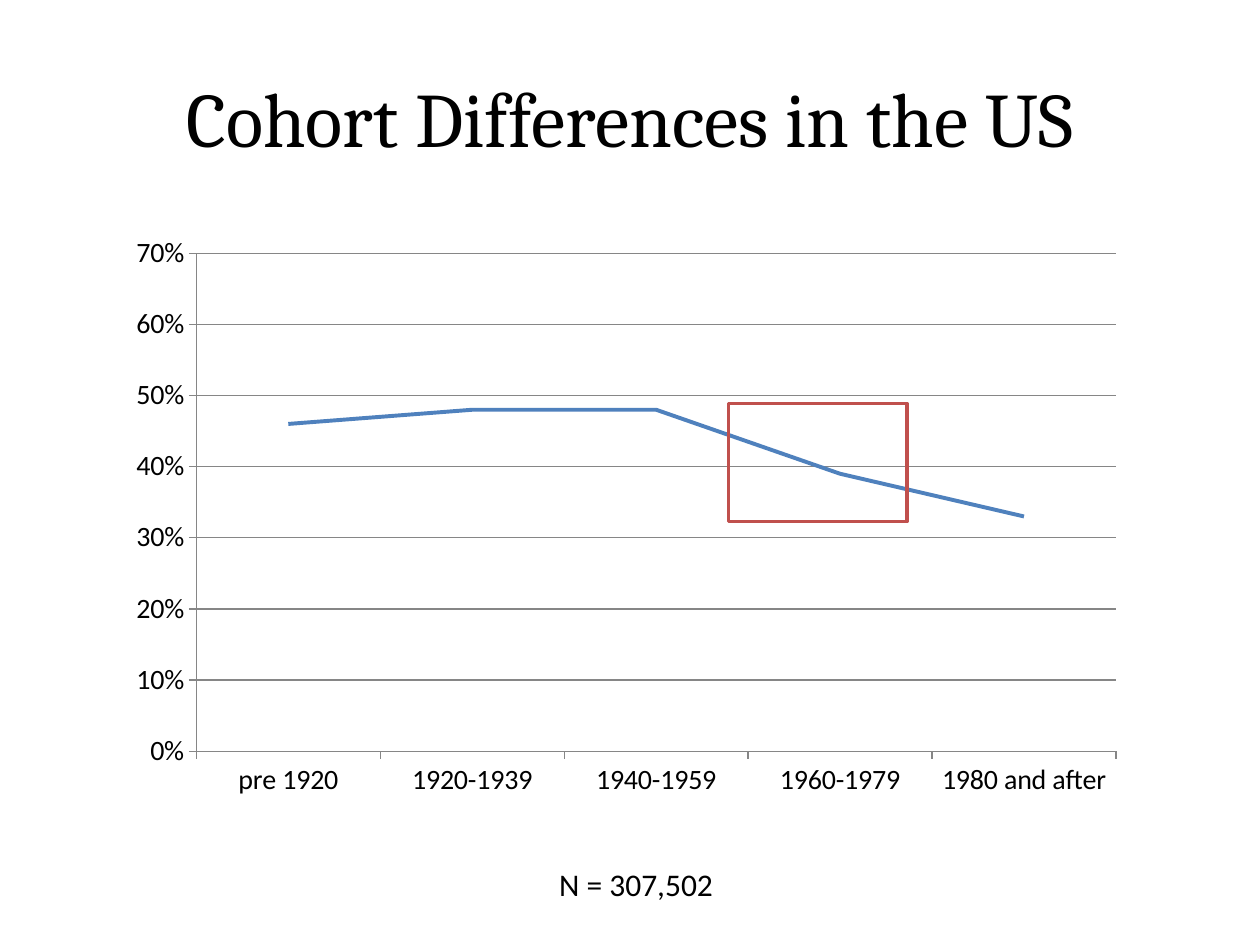
from lxml import etree
from pptx import Presentation
from pptx import util as u
from pptx.chart.data import CategoryChartData
from pptx.dml.color import RGBColor
from pptx.enum import chart as ch, shapes, text
from pptx.oxml.ns import qn

W, H = u.Inches(10), u.Inches(7.5)
COLORS = {"text": "000000", "line": "4F81BD", "mark": "C0504D", "axis": "868686"}
COHORTS = {"pre 1920": 0.46, "1920-1939": 0.48, "1940-1959": 0.48,
           "1960-1979": 0.39, "1980 and after": 0.33}
PLOT = {"x": 0.08, "y": 0.05, "w": 0.9, "h": 0.85}


def rgb(name):
    return RGBColor.from_string(COLORS[name])


def box_of(x, y, w, h):
    return int(x * W), int(y * H), int(w * W), int(h * H)


def style_font(font, name, size):
    font.name, font.size = name, u.Pt(size)
    font.color.rgb = rgb("text")


def style_line(line, color, width):
    line.color.rgb = rgb(color)
    line.width = u.Pt(width)


def add_text(s, box, words, font, size, align, wrap):
    tf = s.shapes.add_textbox(*box).text_frame
    tf.word_wrap = wrap
    tf.vertical_anchor = text.MSO_ANCHOR.MIDDLE
    tf.text = words
    p = tf.paragraphs[0]
    p.alignment = align
    style_font(p.runs[0].font, font, size)


def set_plot_layout(chart):
    area = chart.plots[0]._element.getparent()
    layout = area.find(qn("c:layout"))
    if layout is None:
        layout = etree.Element(qn("c:layout"))
        area.insert(0, layout)
    manual = etree.SubElement(layout, qn("c:manualLayout"))
    settings = {"layoutTarget": "inner", "xMode": "edge", "yMode": "edge", **PLOT}
    for tag, val in settings.items():
        etree.SubElement(manual, qn(f"c:{tag}")).set("val", str(val))


def add_cohort_chart(s, box):
    data = CategoryChartData(number_format="0%")
    data.categories = list(COHORTS)
    data.add_series("Series 1", list(COHORTS.values()))
    chart = s.shapes.add_chart(ch.XL_CHART_TYPE.LINE, *box, data).chart
    chart.has_legend = chart.has_title = False
    style_font(chart.font, "Calibri", 10)
    chart.plots[0].vary_by_categories = False
    series = chart.plots[0].series[0]
    series.smooth = False
    series.marker.style = ch.XL_MARKER_STYLE.NONE
    style_line(series.format.line, "line", 2.25)
    for axis in (chart.category_axis, chart.value_axis):
        axis.major_tick_mark = ch.XL_TICK_MARK.OUTSIDE
        axis.minor_tick_mark = ch.XL_TICK_MARK.NONE
        style_font(axis.tick_labels.font, "Calibri", 16)
        style_line(axis.format.line, "axis", 0.75)
    values = chart.value_axis
    values.minimum_scale, values.maximum_scale, values.major_unit = 0, 0.7, 0.1
    values.tick_labels.number_format = "0%"
    values.tick_labels.number_format_is_linked = False
    values.has_major_gridlines = True
    style_line(values.major_gridlines.format.line, "axis", 0.75)
    set_plot_layout(chart)


def add_highlight(s, box):
    sp = s.shapes.add_shape(shapes.MSO_SHAPE.RECTANGLE, *box)
    sp.shadow.inherit = False
    sp.fill.background()
    style_line(sp.line, "mark", 2)


def main():
    prs = Presentation()
    prs.slide_width, prs.slide_height = W, H
    s = prs.slides.add_slide(prs.slide_layouts[6])
    add_text(s, box_of(0.05, 0.04, 0.9, 0.167), "Cohort Differences in the US",
             "Cambria", 44, text.PP_ALIGN.CENTER, True)
    add_cohort_chart(s, box_of(0.091, 0.237, 0.811, 0.62))
    add_text(s, box_of(0.434, 0.909, 0.144, 0.053), "N = 307,502",
             "Calibri", 18, text.PP_ALIGN.LEFT, False)
    add_highlight(s, box_of(0.578, 0.427, 0.142, 0.125))
    prs.save("out.pptx")


if __name__ == "__main__":
    main()
